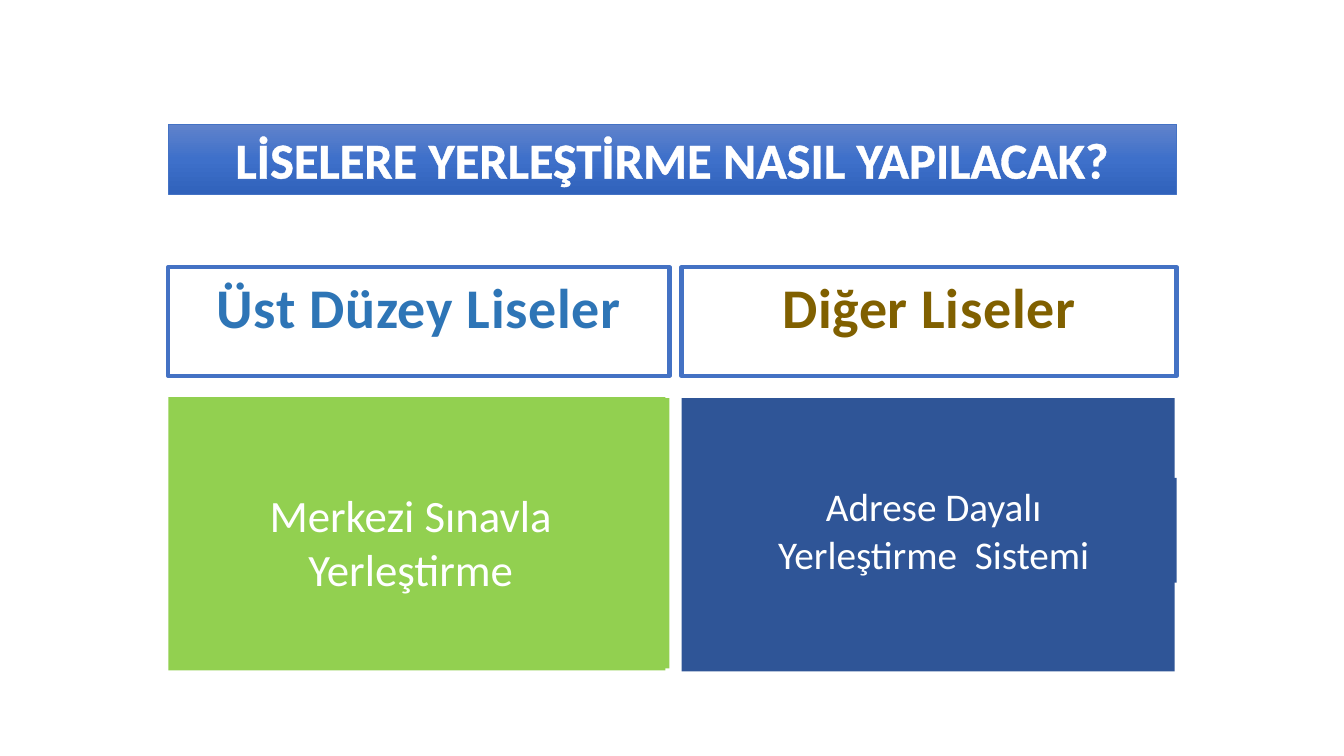
import pptx
import pptx.dml.color
import pptx.enum.shapes
import pptx.enum.text
import pptx.oxml
import pptx.oxml.ns
import pptx.util
import copy

EMU_PER_PX = 9144
WHITE = "FFFFFF"
BLUE = "4472C4"
GREEN = "92D050"
NAVY = "2F5597"


def px(length):
    return pptx.util.Emu(length * EMU_PER_PX)


def colour(value):
    return pptx.dml.color.RGBColor.from_string(value)


def write(shape, text, size=28, color=WHITE, bold=False, spacing=0,
          outline=None, anchor="TOP", line_spacing=None):
    frame = shape.text_frame
    frame.word_wrap = True
    frame.vertical_anchor = getattr(pptx.enum.text.MSO_ANCHOR, anchor)
    for index, line in enumerate(text.split("\n")):
        paragraph = frame.add_paragraph() if index else frame.paragraphs[0]
        paragraph.alignment = pptx.enum.text.PP_ALIGN.CENTER
        if line_spacing:
            paragraph.line_spacing = line_spacing
        run = paragraph.add_run()
        run.text = line
        run.font.name = "Calibri"
        run.font.size = pptx.util.Pt(size)
        run.font.bold = bold
        run.font.color.rgb = colour(color)
        properties = run.font._element
        if spacing:
            properties.set("spc", str(int(spacing * 100)))
        if outline:
            width = int(pptx.util.Pt(outline))
            properties.insert(0, pptx.oxml.parse_xml(
                f'<a:ln {pptx.oxml.ns.nsdecls("a")} w="{width}"><a:solidFill>'
                f'<a:srgbClr val="{color}"/></a:solidFill></a:ln>'))


class PlacementSlide:
    def __init__(self, deck):
        self.slide = deck.slides.add_slide(deck.slide_layouts[6])

    def box(self, left, top, width, height, fill=WHITE, border=None, weight=3):
        shape = self.slide.shapes.add_shape(
            pptx.enum.shapes.MSO_SHAPE.RECTANGLE,
            px(left), px(top), px(width), px(height))
        shape.shadow.inherit = False
        shape.fill.solid()
        shape.fill.fore_color.rgb = colour(fill)
        if border:
            shape.line.color.rgb = colour(border)
            shape.line.width = pptx.util.Pt(weight)
        else:
            shape.line.fill.background()
        return shape

    def banner(self, left, top, width, height, text, stops):
        banner = self.box(left, top, width, height, border=BLUE, weight=0.5)
        banner.fill.gradient()
        banner.fill.gradient_angle = 270
        first = banner.fill._xPr.find(".//" + pptx.oxml.ns.qn("a:gs"))
        first.addnext(copy.deepcopy(first))
        for stop, (position, value) in zip(banner.fill.gradient_stops, stops):
            stop.position = position
            stop.color.rgb = colour(value)
        write(banner, text, size=36, bold=True, outline=1.45,
              anchor="BOTTOM", line_spacing=0.9)

    def heading(self, left, width, text, color):
        heading = self.box(left, 265, width, 108, border=BLUE)
        write(heading, text, size=40, color=color, bold=True, spacing=0.5)

    def panel(self, backs, label, text, fill, size):
        for back in backs:
            self.box(*back, fill=fill)
        write(self.box(*label, fill=fill), text, size=size)


def main():
    deck = pptx.Presentation()
    deck.slide_width = px(1333)
    deck.slide_height = px(750)
    slide = PlacementSlide(deck)

    slide.banner(167, 123, 1000, 70, "LİSELERE YERLEŞTİRME NASIL YAPILACAK?",
                 [(0, "6183CB"), (0.5, "3E70CA"), (1, "3062BB")])
    slide.heading(167, 497, "Üst Düzey Liseler", "2E75B6")
    slide.heading(676, 491, "Diğer Liseler", "806000")
    slide.panel([(167, 394, 493, 271), (171, 395, 493, 268)],
                (171, 479, 473, 118), "Merkezi Sınavla Yerleştirme", GREEN, 32)
    slide.panel([(676, 395, 489, 271)], (685, 474, 482, 104),
                "Adrese Dayalı\nYerleştirme  Sistemi", NAVY, 28)
    deck.save("out.pptx")


if __name__ == "__main__":
    main()
